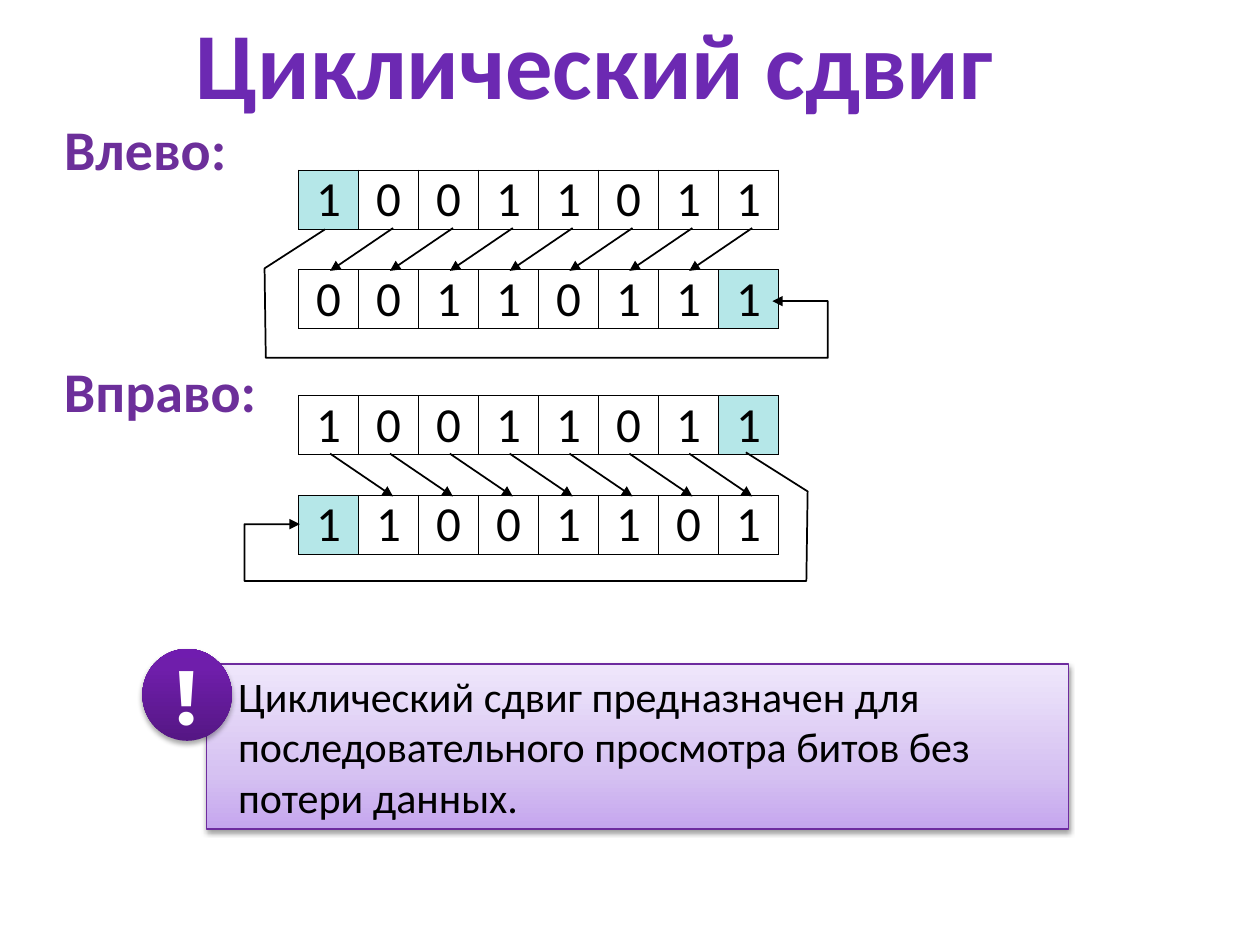
from lxml import etree
from pptx import Presentation
from pptx.dml.color import RGBColor
from pptx.enum.shapes import MSO_CONNECTOR, MSO_SHAPE
from pptx.enum.text import MSO_ANCHOR, PP_ALIGN
from pptx.oxml import parse_xml
from pptx.oxml.ns import nsdecls, qn
from pptx.util import Inches, Pt

COLORS = {
    "title": "6C29B2", "label": "6C2F9A", "text": "000000", "line": "000000",
    "moved": "B5E7E8", "note_line": "6E2C9F", "badge_text": "FFFFFF",
}
GRADIENTS = {
    "note": [(0, "C5A6EE"), (35, "D6C2F2"), (100, "EFE7FB")],
    "badge": [(0, "551784"), (80, "6F1EAB"), (100, "701CAF")],
}
LEFT, CELL, ROW_H = 2.37, 3.81 / 8, 0.47
ROW_GAP = 0.79
SHIFTS = [
    {"label": "Влево:", "label_top": 0.86, "label_width": 1.51, "top": 1.35,
     "rows": [("10011011", 0), ("00110111", 7)], "arrow_dx": (0.5, 0),
     "loop": [(2.58, 1.82), (2.1, 2.13), (2.11, 2.84),
              (6.57, 2.84), (6.57, 2.39), (6.13, 2.39)]},
    {"label": "Вправо:", "label_top": 2.78, "label_width": 1.74, "top": 3.14,
     "rows": [("10011011", 7), ("11001101", 0)], "arrow_dx": (0, 0.5),
     "loop": [(5.92, 3.59), (6.41, 3.9), (6.4, 4.61),
              (1.94, 4.61), (1.94, 4.16), (2.38, 4.16)]},
]


def write(tf, text, size, color, align=PP_ALIGN.LEFT, bold=False, font="Calibri"):
    """Fill the first paragraph of a text frame and format it."""
    p = tf.paragraphs[0]
    p.text, p.alignment = text, align
    for r in p.runs:
        for name, value in {"size": Pt(size), "bold": bold, "name": font}.items():
            setattr(r.font, name, value)
        r.font.color.rgb = RGBColor.from_string(COLORS[color])


def style_arrow(sp):
    """Thin black line with an arrowhead at its end and no shadow."""
    sp.line.color.rgb = RGBColor.from_string(COLORS["line"])
    sp.line.width = Pt(1)
    etree.SubElement(sp.line._get_or_add_ln(), qn("a:tailEnd"), type="triangle")
    etree.SubElement(sp._element.spPr, qn("a:effectLst"))


prs = Presentation()
prs.slide_width, prs.slide_height = Inches(10), Inches(7.5)
s = prs.slides.add_slide(prs.slide_layouts[5])

title = s.shapes.title
title.left, title.top = Inches(0.14), Inches(0.23)
title.width, title.height = Inches(9.16), Inches(0.52)
title.text_frame.vertical_anchor = MSO_ANCHOR.MIDDLE
write(title.text_frame, "Циклический сдвиг", 54, "title", PP_ALIGN.CENTER, True)

for shift in SHIFTS:
    label = s.shapes.add_textbox(Inches(0.41), Inches(shift["label_top"]),
                                 Inches(shift["label_width"]), Inches(0.64))
    label.text_frame.word_wrap = False
    write(label.text_frame, shift["label"], 32, "label", bold=True)

    for i, (bits, moved) in enumerate(shift["rows"]):
        table = s.shapes.add_table(
            1, 8, Inches(LEFT), Inches(shift["top"] + i * ROW_GAP),
            Inches(8 * CELL), Inches(ROW_H)).table
        table.first_row = table.horz_banding = False
        for col, bit in enumerate(bits):
            table.columns[col].width = Inches(CELL)
            cell = table.cell(0, col)
            cell.margin_left = cell.margin_right = Inches(0.08)
            cell.margin_top = cell.margin_bottom = 0
            write(cell.text_frame, bit, 28, "text", PP_ALIGN.CENTER)
            for side in "LRTB":
                cell._tc.get_or_add_tcPr().append(parse_xml(
                    f'<a:ln{side} {nsdecls("a")} w="{Pt(0.5)}"><a:solidFill>'
                    f'<a:srgbClr val="{COLORS["line"]}"/></a:solidFill></a:ln{side}>'))
            if col == moved:
                cell.fill.solid()
                cell.fill.fore_color.rgb = RGBColor.from_string(COLORS["moved"])
            else:
                cell.fill.background()

    start_dx, end_dx = shift["arrow_dx"]
    arrow_top = shift["top"] + ROW_H - 0.01
    for i in range(7):
        x = 2.62 + i * 0.475
        style_arrow(s.shapes.add_connector(
            MSO_CONNECTOR.STRAIGHT, Inches(x + start_dx), Inches(arrow_top),
            Inches(x + end_dx), Inches(arrow_top + 0.34)))

    points = [(Inches(x), Inches(y)) for x, y in shift["loop"]]
    builder = s.shapes.build_freeform(*points[0])
    builder.add_line_segments(points[1:], close=False)
    loop = builder.convert_to_shape()
    loop.fill.background()
    style_arrow(loop)

note = s.shapes.add_shape(MSO_SHAPE.RECTANGLE, Inches(1.64), Inches(5.27),
                          Inches(6.84), Inches(1.31))
note.line.color.rgb = RGBColor.from_string(COLORS["note_line"])
note.line.width = Pt(0.75)
note.text_frame.word_wrap = True
note.text_frame.vertical_anchor = MSO_ANCHOR.TOP
note.text_frame.margin_left = Inches(0.25)
write(note.text_frame, "Циклический сдвиг предназначен для\v"
      "последовательного просмотра битов без\vпотери данных.", 24, "text")

badge = s.shapes.add_shape(MSO_SHAPE.OVAL, Inches(1.13), Inches(5.15),
                           Inches(0.71), Inches(0.73))
badge.line.fill.background()
badge.text_frame.word_wrap = False
badge.text_frame.vertical_anchor = MSO_ANCHOR.MIDDLE
write(badge.text_frame, "!", 44, "badge_text", PP_ALIGN.CENTER, True, "Montserrat")

for sp, name, alpha, dist in ((note, "note", 38, 1.6), (badge, "badge", 35, 1.8)):
    stops = "".join(f'<a:gs pos="{pos * 1000}"><a:srgbClr val="{color}"/></a:gs>'
                    for pos, color in GRADIENTS[name])
    sp._element.spPr.find(qn("a:prstGeom")).addnext(parse_xml(
        f'<a:gradFill {nsdecls("a")} rotWithShape="1"><a:gsLst>{stops}</a:gsLst>'
        '<a:lin ang="16200000" scaled="0"/></a:gradFill>'))
    sp._element.spPr.append(parse_xml(
        f'<a:effectLst {nsdecls("a")}><a:outerShdw blurRad="{Pt(3.1)}" '
        f'dist="{Pt(dist)}" dir="5400000" rotWithShape="0"><a:srgbClr val="000000">'
        f'<a:alpha val="{alpha * 1000}"/></a:srgbClr></a:outerShdw></a:effectLst>'))

prs.save("out.pptx")
